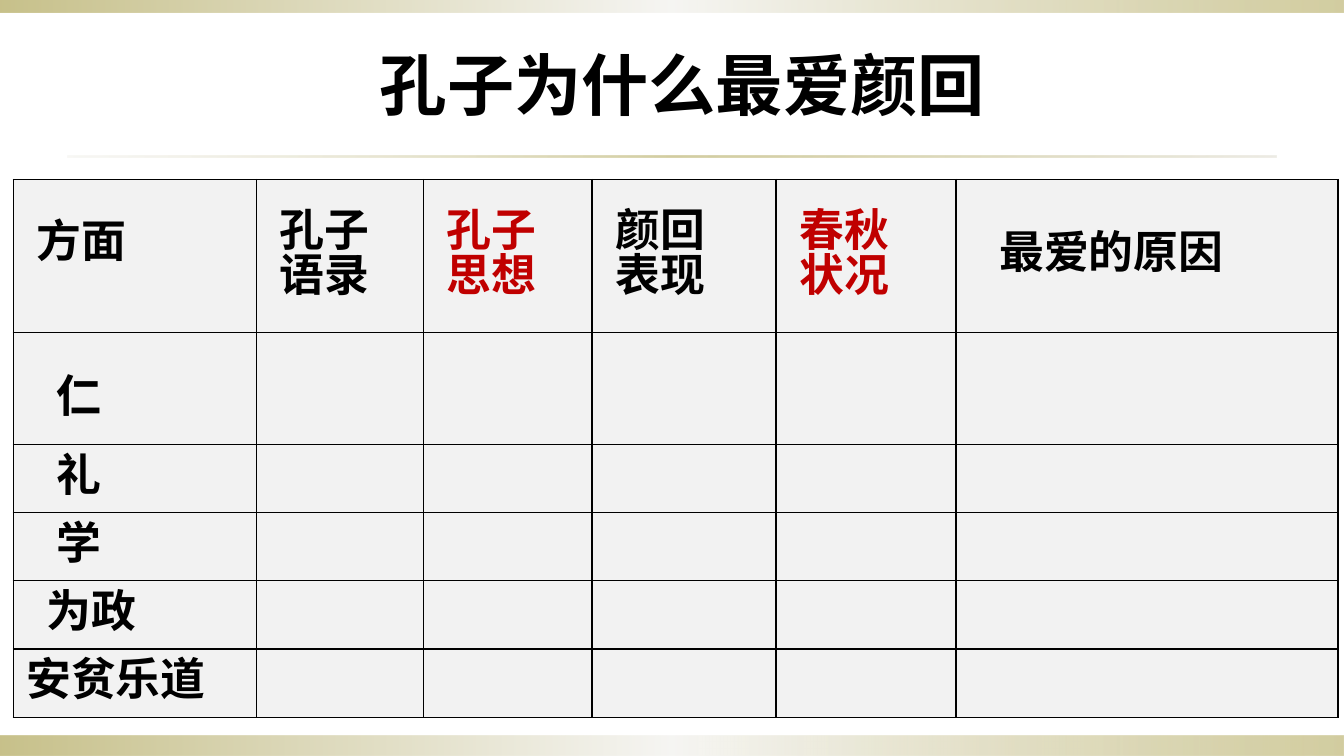
import dataclasses
import typing

import lxml.etree
import pptx
import pptx.dml.color
import pptx.enum.shapes
import pptx.enum.text
import pptx.oxml.ns
import pptx.util

qualified = pptx.oxml.ns.qn


@dataclasses.dataclass(frozen=True)
class Theme:
    font: str = "Arial"
    ink: str = "000000"
    accent: str = "C00000"
    cell: str = "F2F2F2"
    olive: str = "918415"
    pearl: str = "EEEDE8"
    sand: str = "DCD9CC"
    title_size: int = 48
    table_size: int = 32
    line_step: int = 16
    border: int = 1


THEME = Theme()
SLIDE_WIDTH = pptx.util.Inches(13.33)
SLIDE_HEIGHT = pptx.util.Inches(7.5)
CELL_INSET = 0.03
INDENT_STEP = 0.1


class Area(typing.NamedTuple):
    """Left, top, width and height in percent of the slide."""
    left: float
    top: float
    width: float
    height: float


class Stop(typing.NamedTuple):
    position: int
    color: str
    opacity: int


class Band(typing.NamedTuple):
    area: Area
    stops: tuple[Stop, ...]


class Label(typing.NamedTuple):
    """Cell text; indent and line height are counted in steps."""
    row: int
    column: int
    lines: tuple[str, ...]
    indent: int = 2
    line_height: int = 2
    color: str = THEME.ink


EDGE_STOPS = (Stop(0, THEME.olive, 50), Stop(50, THEME.pearl, 50), Stop(100, THEME.olive, 40))
RULE_STOPS = (Stop(0, THEME.sand, 20), Stop(50, THEME.olive, 40), Stop(100, THEME.sand, 50))
BANDS = (
    Band(Area(0, 97.33, 100, 2.67), EDGE_STOPS),
    Band(Area(0, 0, 100, 1.6), EDGE_STOPS),
    Band(Area(5, 20.53, 90, 0.33), RULE_STOPS),
)
TITLE_AREA = Area(27.53, 5.07, 47.19, 12.13)
COLUMN_SHARES = (18.08, 12.43, 12.57, 13.69, 13.39, 28.42)
ROW_SHARES = (20.24, 14.81) + (9.02,) * 4
TABLE_AREA = Area(0.98, 23.74, sum(COLUMN_SHARES), sum(ROW_SHARES))
LABELS = (
    Label(0, 0, ("方面",), line_height=1),
    Label(0, 1, ("孔子", "语录")),
    Label(0, 2, ("孔子", "思想"), color=THEME.accent),
    Label(0, 3, ("颜回", "表现")),
    Label(0, 4, ("春秋", "状况"), color=THEME.accent),
    Label(0, 5, ("最爱的原因",), indent=4),
    Label(1, 0, ("仁",), indent=4, line_height=3),
    Label(2, 0, ("礼",), indent=4),
    Label(3, 0, ("学",), indent=4),
    Label(4, 0, ("为政",), indent=3),
    Label(5, 0, ("安贫乐道",), indent=1),
)


def across(share: float) -> int:
    return round(SLIDE_WIDTH * share / 100)


def down(share: float) -> int:
    return round(SLIDE_HEIGHT * share / 100)


def place(area: Area) -> tuple[int, int, int, int]:
    return across(area.left), down(area.top), across(area.width), down(area.height)


def rgb(color: str) -> pptx.dml.color.RGBColor:
    return pptx.dml.color.RGBColor.from_string(color)


def add_color(parent: typing.Any, color: str) -> typing.Any:
    return lxml.etree.SubElement(parent, qualified("a:srgbClr"), val=color)


def write_text(paragraph: typing.Any, text: str, *, size: int, color: str = THEME.ink,
               line_points: int | None = None) -> None:
    run = paragraph.add_run()
    run.text = text
    run.font.size = pptx.util.Pt(size)
    run.font.bold = True
    run.font.color.rgb = rgb(color)
    run.font.name = THEME.font
    properties = run._r.get_or_add_rPr()
    properties.set("lang", "zh-CN")
    lxml.etree.SubElement(properties, qualified("a:ea"), typeface=THEME.font)
    if line_points:
        paragraph.line_spacing = pptx.util.Pt(line_points)


def draw_band(slide: typing.Any, band: Band) -> None:
    shape = slide.shapes.add_shape(pptx.enum.shapes.MSO_SHAPE.RECTANGLE, *place(band.area))
    shape.shadow.inherit = False
    shape.line.fill.background()
    shape.fill.gradient()
    shape.fill.gradient_angle = 0
    stop_list = shape._element.spPr.find(".//" + qualified("a:gsLst"))
    for default_stop in list(stop_list):
        stop_list.remove(default_stop)
    for stop in band.stops:
        element = lxml.etree.SubElement(stop_list, qualified("a:gs"), pos=str(stop.position * 1000))
        color = add_color(element, stop.color)
        lxml.etree.SubElement(color, qualified("a:alpha"), val=str(stop.opacity * 1000))


def draw_title(slide: typing.Any) -> None:
    frame = slide.shapes.add_textbox(*place(TITLE_AREA)).text_frame
    frame.word_wrap = False
    write_text(frame.paragraphs[0], "孔子为什么最爱颜回", size=THEME.title_size)


def style_cell(cell: typing.Any) -> None:
    properties = cell._tc.get_or_add_tcPr()
    for side in ("a:lnL", "a:lnR", "a:lnT", "a:lnB"):
        line = lxml.etree.SubElement(properties, qualified(side),
                                     w=str(pptx.util.Pt(THEME.border)))
        add_color(lxml.etree.SubElement(line, qualified("a:solidFill")), THEME.ink)
    cell.fill.solid()
    cell.fill.fore_color.rgb = rgb(THEME.cell)


def fill_cell(cell: typing.Any, label: Label) -> None:
    cell.vertical_anchor = pptx.enum.text.MSO_ANCHOR.MIDDLE
    cell.margin_left = pptx.util.Inches(CELL_INSET + INDENT_STEP * label.indent)
    cell.margin_right = pptx.util.Inches(CELL_INSET)
    cell.margin_top = cell.margin_bottom = 0
    frame = cell.text_frame
    for index, text in enumerate(label.lines):
        paragraph = frame.add_paragraph() if index else frame.paragraphs[0]
        write_text(paragraph, text, size=THEME.table_size, color=label.color,
                   line_points=THEME.line_step * label.line_height)


def draw_table(slide: typing.Any) -> None:
    table = slide.shapes.add_table(len(ROW_SHARES), len(COLUMN_SHARES), *place(TABLE_AREA)).table
    table.first_row = table.horz_banding = False
    for column, share in zip(table.columns, COLUMN_SHARES):
        column.width = across(share)
    for row, share in zip(table.rows, ROW_SHARES):
        row.height = down(share)
    for cell in table.iter_cells():
        style_cell(cell)
    for label in LABELS:
        fill_cell(table.cell(label.row, label.column), label)


def main() -> None:
    presentation = pptx.Presentation()
    presentation.slide_width = SLIDE_WIDTH
    presentation.slide_height = SLIDE_HEIGHT
    slide = presentation.slides.add_slide(presentation.slide_layouts[6])
    for band in BANDS:
        draw_band(slide, band)
    draw_table(slide)
    draw_title(slide)
    presentation.save("out.pptx")


if __name__ == "__main__":
    main()
